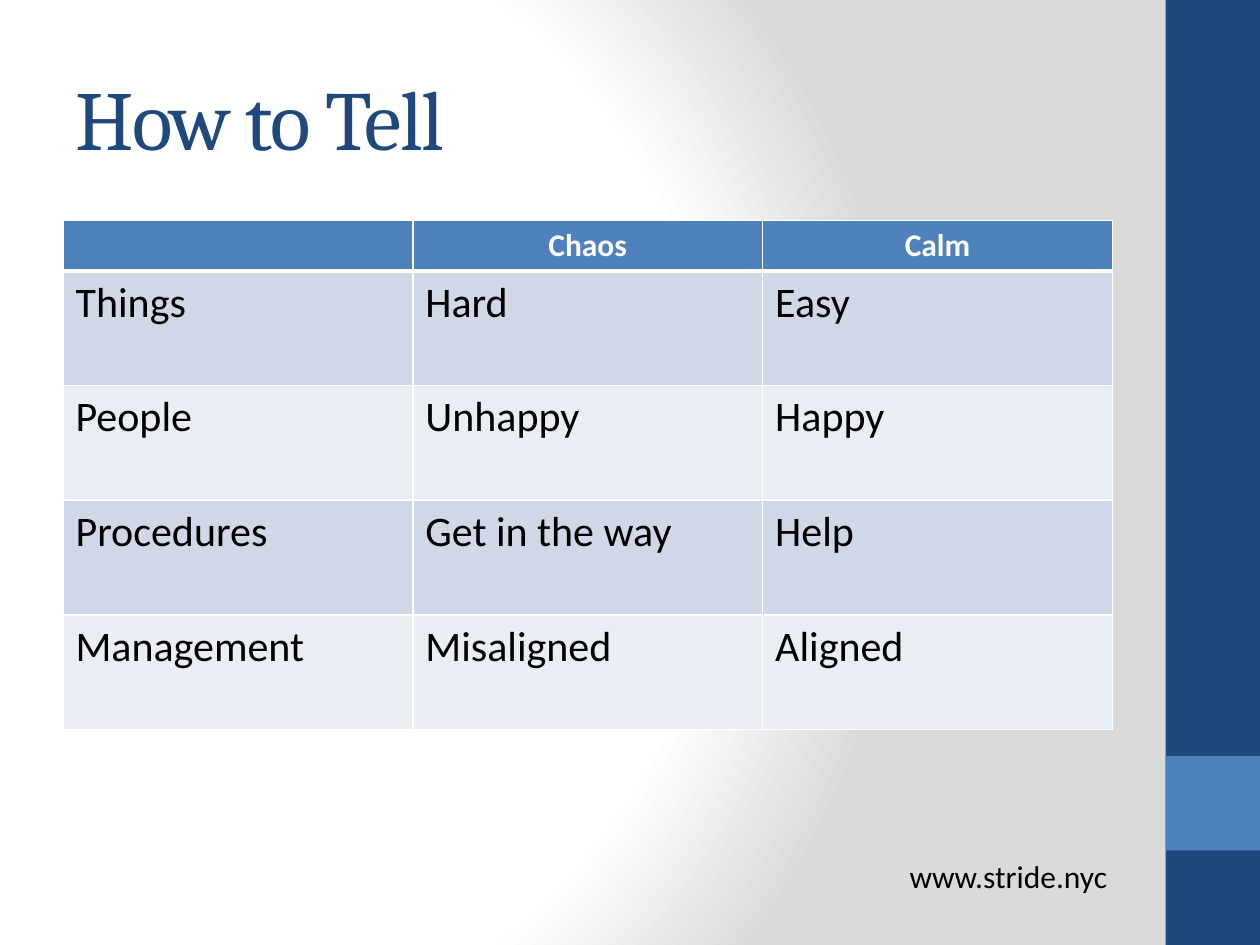
import pptx
import pptx.dml.color
import pptx.enum.shapes
import pptx.enum.text
import pptx.oxml
import pptx.oxml.ns
import pptx.util
from pptx.util import Inches

COLORS = {
    "navy": "1F497D",
    "blue": "4F81BD",
    "white": "FFFFFF",
    "black": "000000",
    "gray": "DADADA",
    "dark_band": "D0D8E8",
    "light_band": "E9EDF4",
}
TITLE = "How to Tell"
ADDRESS = "www.stride.nyc"
ROWS = [
    ("", "Chaos", "Calm"),
    ("Things", "Hard", "Easy"),
    ("People", "Unhappy", "Happy"),
    ("Procedures", "Get in the way", "Help"),
    ("Management", "Misaligned", "Aligned"),
]
SIDE_BARS = [("navy", 0, 7.5), ("blue", 6, 0.75)]
BACKGROUND_STOPS = [(0, "white"), (75, "white"), (100, "gray")]
TABLE_LEFT, TABLE_TOP, TABLE_WIDTH = 0.5, 1.75, 8.33
HEADER_HEIGHT, ROW_HEIGHT = 0.4, 0.91
NAMESPACE = pptx.oxml.ns.nsdecls("a")


def rgb(name):
    return pptx.dml.color.RGBColor.from_string(COLORS[name])


def style(paragraph, size, color, family="Calibri", bold=False):
    font = paragraph.font
    font.size = pptx.util.Pt(size)
    font.name = family
    font.bold = bold
    font.color.rgb = rgb(color)


def set_background(slide):
    slide.background.fill.gradient()
    gradient = slide.element.find(".//" + pptx.oxml.ns.qn("a:gradFill"))
    stops = "".join(
        f'<a:gs pos="{position * 1000}"><a:srgbClr val="{COLORS[color]}"/></a:gs>'
        for position, color in BACKGROUND_STOPS
    )
    gradient.getparent().replace(gradient, pptx.oxml.parse_xml(
        f'<a:gradFill {NAMESPACE} rotWithShape="1"><a:gsLst>{stops}</a:gsLst>'
        '<a:path path="circle"><a:fillToRect l="20000" t="50000" r="100000" b="50000"/>'
        '</a:path></a:gradFill>'
    ))


def add_side_bar(slide, color, top, height):
    shape = slide.shapes.add_shape(
        pptx.enum.shapes.MSO_SHAPE.RECTANGLE,
        Inches(9.25), Inches(top), Inches(0.75), Inches(height),
    )
    shape.shadow.inherit = False
    shape.fill.solid()
    shape.fill.fore_color.rgb = rgb(color)
    shape.line.fill.background()


def add_text(slide, text, left, top, width, height, wrap):
    box = slide.shapes.add_textbox(Inches(left), Inches(top), Inches(width), Inches(height))
    box.text_frame.word_wrap = wrap
    box.text_frame.text = text
    return box.text_frame


def add_borders(cell, bottom_width):
    properties = cell._tc.get_or_add_tcPr()
    for side, width in (("L", 1), ("R", 1), ("T", 1), ("B", bottom_width)):
        properties.append(pptx.oxml.parse_xml(
            f'<a:ln{side} {NAMESPACE} w="{pptx.util.Pt(width)}"><a:solidFill>'
            f'<a:srgbClr val="{COLORS["white"]}"/></a:solidFill></a:ln{side}>'
        ))


def add_comparison_table(slide):
    height = HEADER_HEIGHT + ROW_HEIGHT * (len(ROWS) - 1)
    table = slide.shapes.add_table(
        len(ROWS), len(ROWS[0]),
        Inches(TABLE_LEFT), Inches(TABLE_TOP), Inches(TABLE_WIDTH), Inches(height),
    ).table
    for row_index, row in enumerate(ROWS):
        header = row_index == 0
        table.rows[row_index].height = Inches(HEADER_HEIGHT if header else ROW_HEIGHT)
        band = "blue" if header else ("light_band", "dark_band")[row_index % 2]
        for column_index, text in enumerate(row):
            cell = table.cell(row_index, column_index)
            cell.text = text
            add_borders(cell, 3 if header else 1)
            cell.fill.solid()
            cell.fill.fore_color.rgb = rgb(band)
            paragraph = cell.text_frame.paragraphs[0]
            if header:
                paragraph.alignment = pptx.enum.text.PP_ALIGN.CENTER
                style(paragraph, 18, "white", bold=True)
            else:
                style(paragraph, 24, "black")


def main():
    presentation = pptx.Presentation()
    presentation.slide_width = Inches(10)
    presentation.slide_height = Inches(7.5)
    slide = presentation.slides.add_slide(presentation.slide_layouts[6])
    set_background(slide)
    for color, top, height in SIDE_BARS:
        add_side_bar(slide, color, top, height)

    address = add_text(slide, ADDRESS, 7.12, 6.75, 1.81, 0.4, False)
    style(address.paragraphs[0], 18, "black")

    title = add_text(slide, TITLE, 0.5, 0.3, TABLE_WIDTH, 1.25, True)
    title.vertical_anchor = pptx.enum.text.MSO_ANCHOR.MIDDLE
    style(title.paragraphs[0], 48, "navy", "Cambria")
    title.paragraphs[0].runs[0].font._element.set("spc", "-100")

    add_comparison_table(slide)
    presentation.save("out.pptx")


if __name__ == "__main__":
    main()
